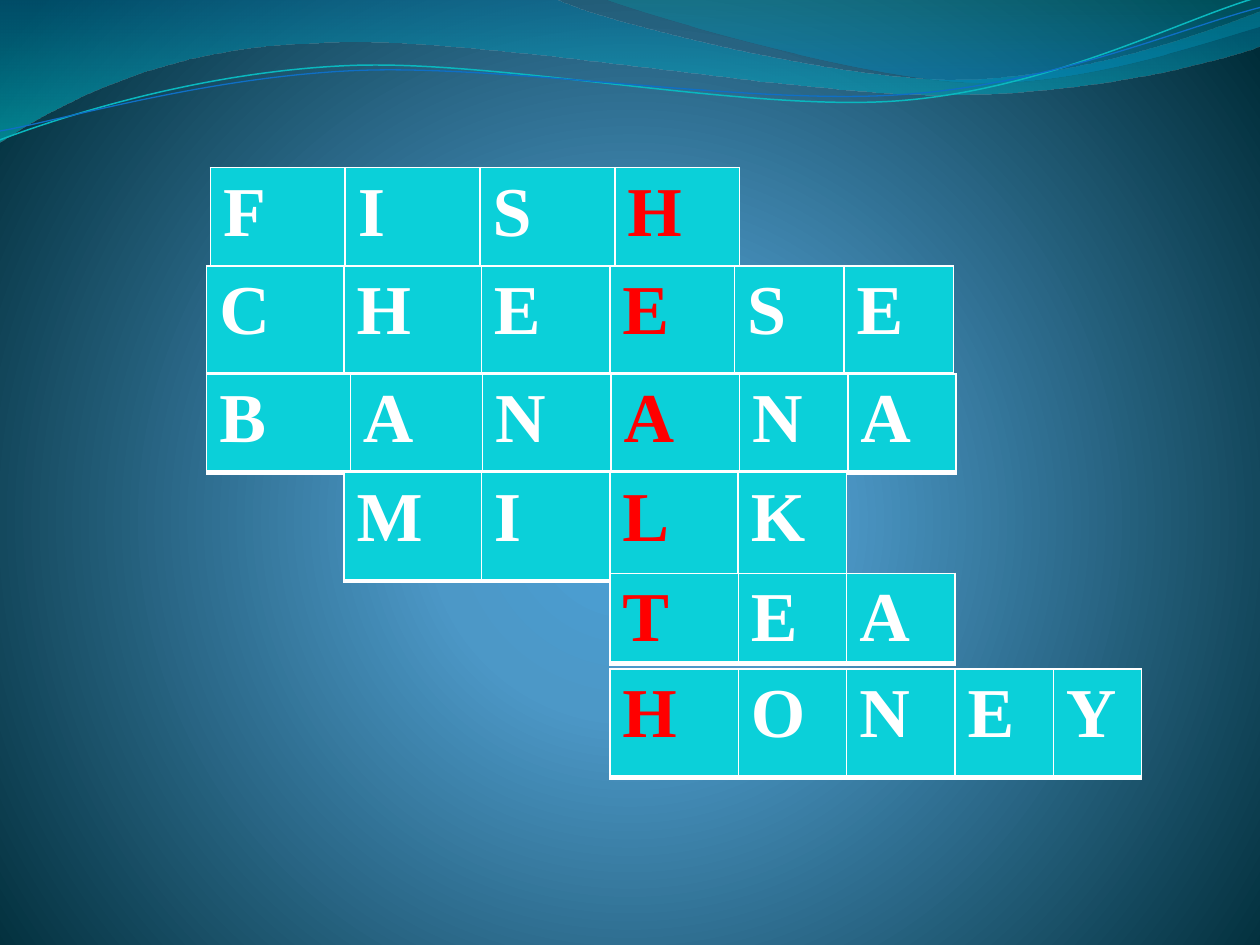
import math

from lxml import etree
from pptx import Presentation
from pptx.dml.color import RGBColor
from pptx.oxml.ns import qn
from pptx.util import Inches, Pt

COLORS = {
    "cell": "0BD0D9", "letter": "FFFFFF", "key": "FF0000", "border": "FFFFFF",
    "glow": "4AA0D6", "sky": "4C98C7", "night": "002C38",
    "wave_top": "0074A1", "wave_bottom": "00C6CF",
    "crest_top": "00A1A9", "crest_bottom": "008BBF",
    "teal_line": "0AB8BF", "blue_line": "0F6FC6",
}
FONT = "Times New Roman"
LINE_TILT = -2.7

# Outlines in inches: a start point, then lines (x, y) or Bezier curves (six numbers)
WAVE = [(0, 0), (4.4, -0.01),
        (4.76, 0.17, 6.64, 0.63, 7.58, 0.63), (8.53, 0.63, 9.58, 0.26, 10, 0.09),
        (10.01, 0.36),
        (9.83, 0.44, 8.7, 0.76, 7.46, 0.75), (6.22, 0.75, 3.82, 0.28, 2.57, 0.34),
        (1.29, 0.36, 0.46, 0.83, -0.01, 1.13)]
CREST = [(4.79, -0.01), (5.09, 0.11, 6.82, 0.62, 7.69, 0.65),
         (8.56, 0.69, 9.61, 0.32, 10, 0.21), (10, 0)]
TEAL_LINE = [(0, 1.11), (0.48, 0.93, 1.58, 0.57, 2.77, 0.52),
             (3.95, 0.47, 5.93, 0.89, 7.13, 0.8), (8.33, 0.71, 9.38, 0.15, 9.98, -0.02)]
BLUE_LINE = [(0, 1.04), (0.47, 0.96, 1.64, 0.61, 2.83, 0.56),
             (4.03, 0.51, 5.97, 0.84, 7.17, 0.75), (8.36, 0.67, 9.41, 0.21, 10, 0.06)]

# word, index of its key letter, left, top, row height, column widths
WORDS = [
    ("FISH", 3, 1.67, 1.33, 0.86, [1.07, 1.07, 1.07, 0.99]),
    ("CHEESE", 3, 1.64, 2.11, 0.86, [1.09, 1.09, 1.02, 0.99, 0.87, 0.87]),
    ("BANANA", 3, 1.64, 2.97, 0.78, [1.14, 1.05, 1.02, 1.02, 0.86, 0.86]),
    ("MILK", 2, 2.73, 3.75, 0.86, [1.09, 1.02, 1.02, 0.86]),
    ("TEA", 0, 4.84, 4.55, 0.7, [1.02, 0.86, 0.86]),
    ("HONEY", 0, 4.84, 5.31, 0.86, [1.02, 0.86, 0.86, 0.78, 0.7]),
]


def rgb(name):
    return RGBColor.from_string(COLORS[name])


def add_child(parent, tag, **attributes):
    child = etree.SubElement(parent, qn(tag))
    for key, value in attributes.items():
        child.set(key, str(value))
    return child


def set_gradient(fill, owner, stops, focus=None):
    """Give owner a gradient of (percent, color, opacity): downward, or circular around focus."""
    fill.background()
    no_fill = next(owner.iter(qn("a:noFill")))
    gradient = etree.Element(qn("a:gradFill"), rotWithShape="1")
    stop_list = add_child(gradient, "a:gsLst")
    for position, color, opacity in stops:
        stop = add_child(stop_list, "a:gs", pos=position * 1000)
        tint = add_child(stop, "a:srgbClr", val=COLORS[color])
        if opacity < 100:
            add_child(tint, "a:alpha", val=opacity * 1000)
    if focus:
        circle = add_child(gradient, "a:path", path="circle")
        sides = {side: percent * 1000 for side, percent in zip("ltrb", focus)}
        add_child(circle, "a:fillToRect", **sides)
    else:
        add_child(gradient, "a:lin", ang=90 * 60000, scaled=0)
    no_fill.getparent().replace(no_fill, gradient)


def turn(point, center, degrees):
    dx, dy = point[0] - center[0], point[1] - center[1]
    cos, sin = math.cos(math.radians(degrees)), math.sin(math.radians(degrees))
    return center[0] + dx * cos - dy * sin, center[1] + dx * sin + dy * cos


def bend(shape, segments):
    """Join the three straight steps of each Bezier segment into one curve."""
    steps = iter(list(shape._element.spPr.iter(qn("a:lnTo"))))
    for segment in segments:
        parts = [next(steps) for _ in range(len(segment) // 2)]
        if len(parts) == 3:
            curve = etree.Element(qn("a:cubicBezTo"))
            parts[0].addprevious(curve)
            for part in parts:
                curve.append(part[0])
                part.getparent().remove(part)


def add_outline(shapes, outline, close, tilt=0, center=(0, 0)):
    points = [segment[i:i + 2] for segment in outline for i in range(0, len(segment), 2)]
    start, *rest = [tuple(Inches(value) for value in turn(point, center, -tilt))
                    for point in points]
    builder = shapes.build_freeform(*start, scale=1.0)
    builder.add_line_segments(rest, close=close)
    shape = builder.convert_to_shape()
    bend(shape, outline[1:])
    shape.rotation = tilt
    shape.shadow.inherit = False
    return shape


def add_wave(slide, outline, stops):
    wave = add_outline(slide.shapes, outline, close=True)
    set_gradient(wave.fill, wave._element.spPr, stops)
    wave.line.fill.background()


def add_wave_line(group, outline, center, color, width):
    curve = add_outline(group.shapes, outline, False, LINE_TILT, center)
    curve.fill.background()
    curve.line.color.rgb = rgb(color)
    curve.line.width = Pt(width)


def set_borders(cell):
    properties = cell._tc.get_or_add_tcPr()
    for side, width in (("L", 1), ("R", 1), ("T", 1), ("B", 3)):
        border = add_child(properties, f"a:ln{side}", w=Pt(width))
        add_child(add_child(border, "a:solidFill"), "a:srgbClr", val=COLORS["border"])


def fill_cell(cell, letter, color):
    set_borders(cell)
    cell.fill.solid()
    cell.fill.fore_color.rgb = rgb("cell")
    cell.text_frame.text = letter
    font = cell.text_frame.paragraphs[0].runs[0].font
    font.name, font.size, font.bold = FONT, Pt(40), True
    font.color.rgb = rgb(color)


def add_word(slide, word, key, left, top, height, widths):
    table = slide.shapes.add_table(1, len(word), Inches(left), Inches(top),
                                   Inches(sum(widths)), Inches(height)).table
    table.first_row = table.horz_banding = False
    for index, (letter, width) in enumerate(zip(word, widths)):
        table.columns[index].width = Inches(width)
        fill_cell(table.cell(0, index), letter, "key" if index == key else "letter")


def main():
    prs = Presentation()
    prs.slide_width, prs.slide_height = Inches(10), Inches(7.5)
    slide = prs.slides.add_slide(prs.slide_layouts[6])

    set_gradient(slide.background.fill, slide._element.cSld,
                 [(0, "glow", 100), (25, "sky", 100), (100, "night", 100)],
                 focus=(10, 110, 10, 100))
    add_wave(slide, WAVE, [(0, "wave_top", 45), (100, "wave_bottom", 55)])
    add_wave(slide, CREST, [(0, "crest_top", 30), (80, "crest_bottom", 45)])
    wave_lines = slide.shapes.add_group_shape()
    add_wave_line(wave_lines, TEAL_LINE, (4.99, 0.58), "teal_line", 0.85)
    add_wave_line(wave_lines, BLUE_LINE, (5, 0.59), "blue_line", 0.75)
    for entry in WORDS:
        add_word(slide, *entry)

    prs.save("out.pptx")


if __name__ == "__main__":
    main()
